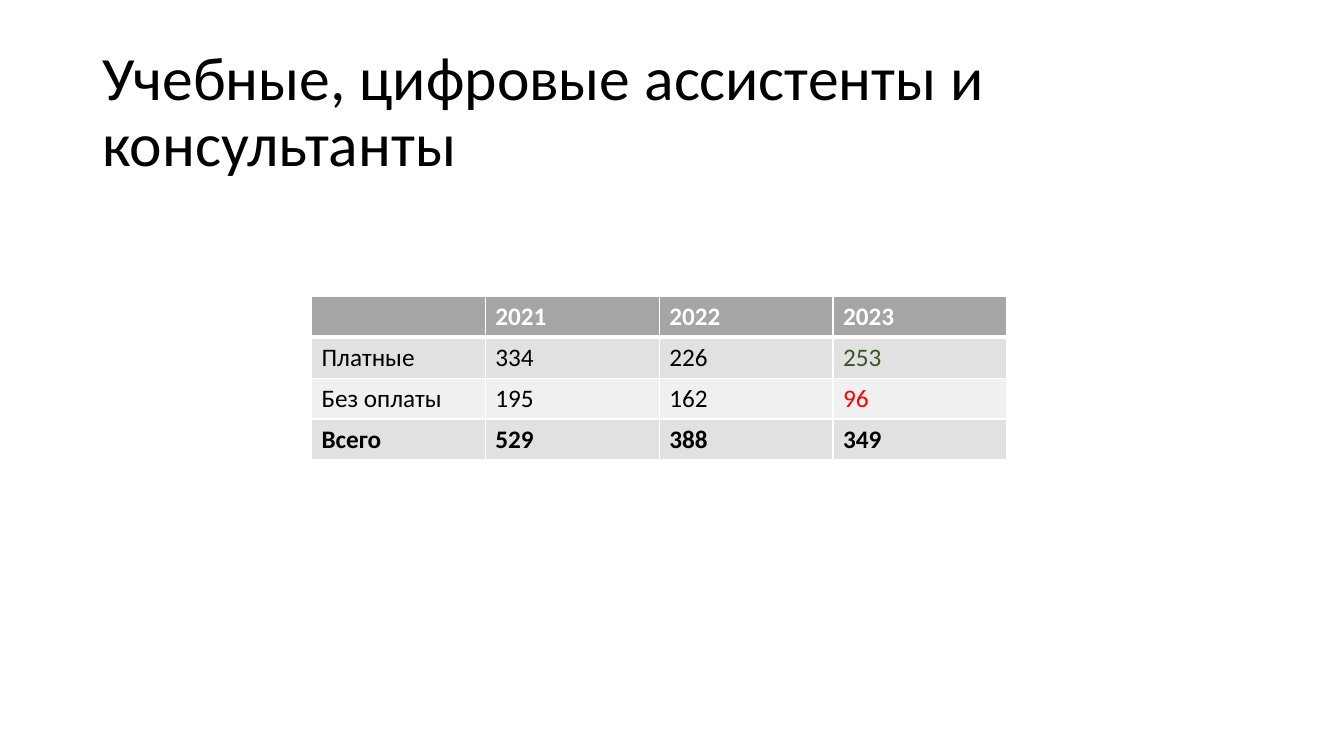
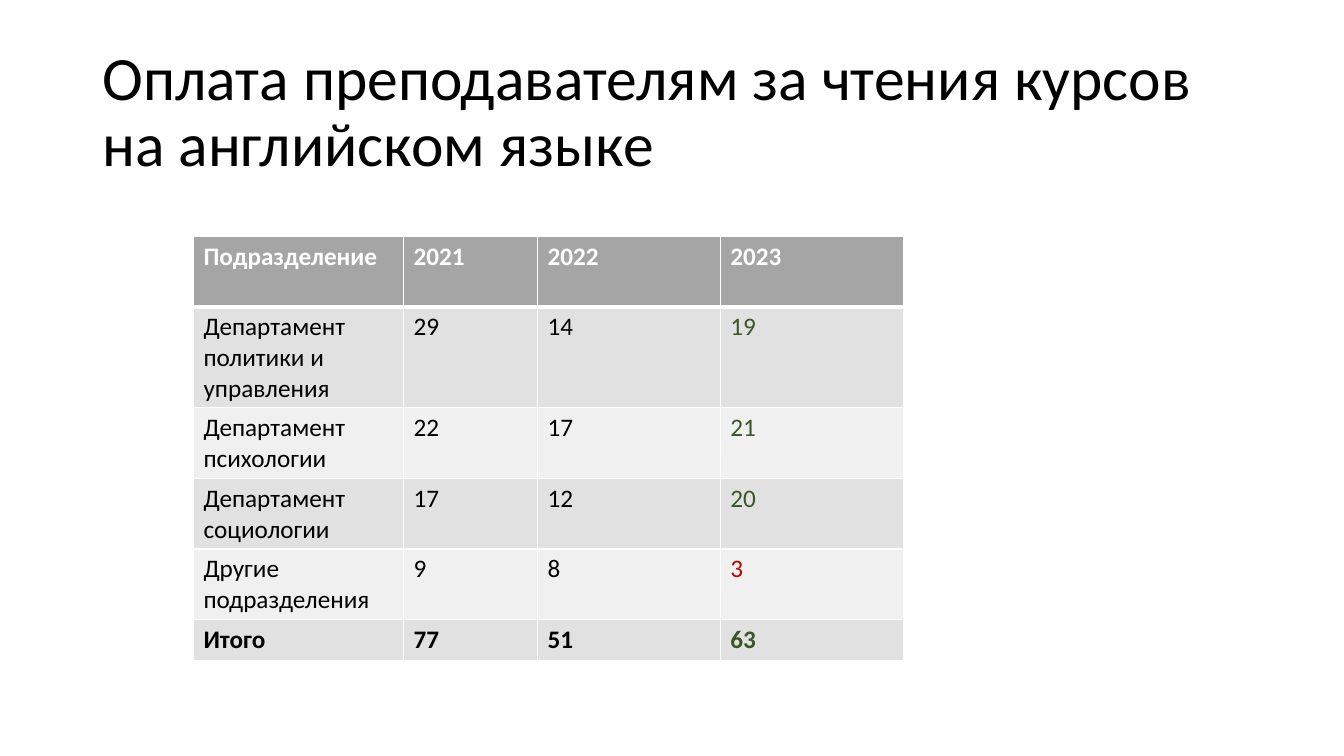
from lxml.etree import SubElement
from pptx import Presentation
from pptx.dml.color import RGBColor
from pptx.enum.text import MSO_ANCHOR
from pptx.oxml.ns import qn
from pptx.util import Pt

FONT = "Calibri"
BLACK, WHITE, GREEN = "000000", "FFFFFF", "385723"
HEADER_FILL = "A5A5A5"
BAND_FILLS = ["F0F0F0", "E1E1E1"]


def style_text(paragraph, size, color, bold=False):
    paragraph.font.name = FONT
    paragraph.font.size = Pt(size)
    paragraph.font.bold = bold
    paragraph.font.color.rgb = RGBColor.from_string(color)


def add_border(cell, side, width):
    properties = cell._tc.get_or_add_tcPr()
    line = SubElement(properties, qn(f"a:{side}"), w=str(Pt(width)))
    SubElement(SubElement(line, qn("a:solidFill")), qn("a:srgbClr"), val=WHITE)


slides = [
    {
        "title": "Учебные, цифровые ассистенты и консультанты",
        "position": (222.5, 211.7),
        "widths": [124.2] * 4,
        "heights": [29.2] * 4,
        "rows": [
            ["", "2021", "2022", "2023"],
            ["Платные", "334", "226", "253"],
            ["Без оплаты", "195", "162", "96"],
            ["Всего", "529", "388", "349"],
        ],
        "last_column_colors": [GREEN, "FF0000", BLACK],
    },
    {
        "title": "Оплата преподавателям за чтения курсов на английском языке",
        "position": (138.2, 168.8),
        "widths": [150, 95.8, 130.6, 130.6],
        "heights": [50.4, 71.3, 50.4, 50.4, 50.4, 29.2],
        "rows": [
            ["Подразделение", "2021", "2022", "2023"],
            ["Департамент политики и управления", "29", "14", "19"],
            ["Департамент психологии", "22", "17", "21"],
            ["Департамент социологии", "17", "12", "20"],
            ["Другие подразделения", "9", "8", "3"],
            ["Итого", "77", "51", "63"],
        ],
        "last_column_colors": [GREEN, GREEN, GREEN, "C00000", GREEN],
    },
]

presentation = Presentation()
presentation.slide_width = Pt(960)
presentation.slide_height = Pt(540)

for content in slides:
    slide = presentation.slides.add_slide(presentation.slide_layouts[6])

    title = slide.shapes.add_textbox(Pt(66), Pt(28.75), Pt(828), Pt(104.4))
    title.text_frame.word_wrap = True
    title.text_frame.vertical_anchor = MSO_ANCHOR.MIDDLE
    paragraph = title.text_frame.paragraphs[0]
    paragraph.text = content["title"]
    paragraph.line_spacing = 0.9
    style_text(paragraph, 44, BLACK)

    rows, widths, heights = content["rows"], content["widths"], content["heights"]
    left, top = content["position"]
    table = slide.shapes.add_table(
        len(rows), len(widths), Pt(left), Pt(top), Pt(sum(widths)), Pt(sum(heights))
    ).table
    for column, width in zip(table.columns, widths):
        column.width = Pt(width)
    for row, height in zip(table.rows, heights):
        row.height = Pt(height)

    last_row, last_column = len(rows) - 1, len(widths) - 1
    for row_index, values in enumerate(rows):
        for column_index, value in enumerate(values):
            cell = table.cell(row_index, column_index)
            is_header = row_index == 0
            fill = HEADER_FILL if is_header else BAND_FILLS[row_index % 2]
            color = WHITE if is_header else BLACK
            if not is_header and column_index == last_column:
                color = content["last_column_colors"][row_index - 1]

            add_border(cell, "lnL", 1)
            add_border(cell, "lnR", 1)
            add_border(cell, "lnT", 3 if row_index == 1 else 1)
            add_border(cell, "lnB", 3 if is_header else 1)
            cell.fill.solid()
            cell.fill.fore_color.rgb = RGBColor.from_string(fill)
            cell.text = value
            style_text(
                cell.text_frame.paragraphs[0], 18, color, row_index in (0, last_row)
            )

presentation.save("out.pptx")
